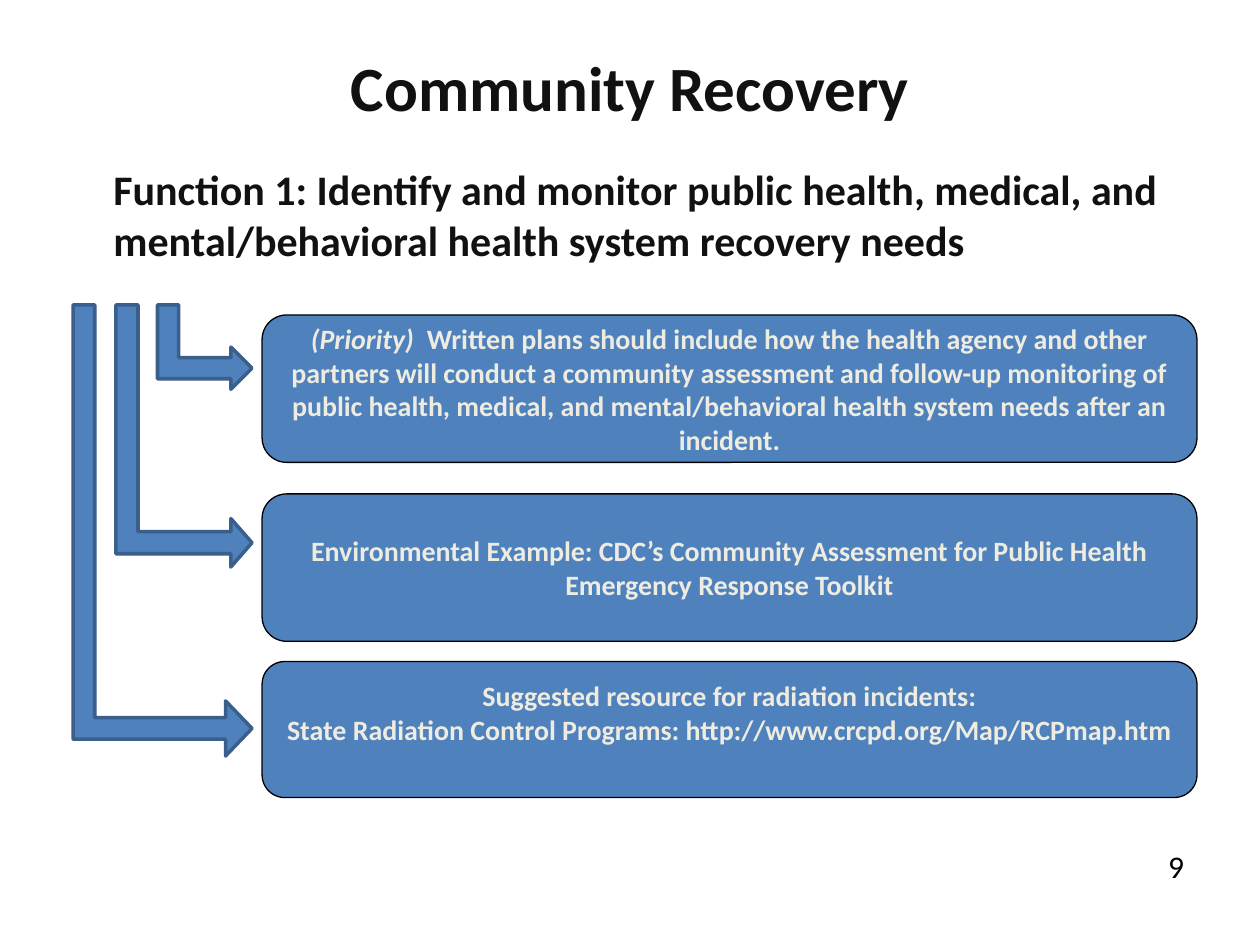
from lxml import etree
from pptx import Presentation
from pptx.dml.color import RGBColor
from pptx.enum import shapes, text
from pptx.oxml.ns import qn
from pptx.util import Inches, Pt

COLORS = {"ink": "111111", "black": "000000", "cream": "EEECE1",
          "blue": "4F81BD", "navy": "3A5F8C"}
TITLE = "Community Recovery"
FUNCTION = ("Function 1: Identify and monitor public health, medical, and "
            "mental/behavioral health system recovery needs")
PAGE_NUMBER = "9"
CARD_LEFT, CARD_WIDTH = 2.08, 7.42
CARDS = [
    {"top": 2.5, "height": 1.17, "bottom_inset": 0.05, "paragraphs": [[
        ("(Priority) ", True),
        (" Written plans should include how the health agency and other "
         "partners will conduct a community assessment and follow-up "
         "monitoring of public health, medical, and mental/behavioral "
         "health system needs after an incident.", False)]]},
    {"top": 3.92, "height": 1.17, "bottom_inset": 0.05, "paragraphs": [[
        ("Environmental Example: CDC’s Community Assessment for Public "
         "Health Emergency Response Toolkit", False)]]},
    {"top": 5.25, "height": 1.08, "bottom_inset": 0.32, "paragraphs": [
        [("Suggested resource for radiation incidents:", False)],
        [("State Radiation Control Programs: "
          "http://www.crcpd.org/Map/RCPmap.htm", False)]]},
]
ARROWS = [
    ((0.42, 2.92, 2.08, 1.08), (0.162, 0.178, 0.156)),
    ((1.29, 2.38, 0.67, 0.75), (0.25, 0.25, 0.25)),
    ((-0.5, 3.5, 3.58, 1.42), (0.121, 0.154, 0.148)),
]


def color(name):
    return RGBColor.from_string(COLORS[name])


def write(box, paragraphs, size, ink, bold=True, align=text.PP_ALIGN.CENTER,
          anchor=text.MSO_ANCHOR.MIDDLE, bottom_inset=0.05):
    frame = box.text_frame
    frame.word_wrap = True
    frame.auto_size = text.MSO_AUTO_SIZE.NONE
    frame.vertical_anchor = anchor
    frame.margin_bottom = Inches(bottom_inset)
    for index, spans in enumerate(paragraphs):
        para = frame.add_paragraph() if index else frame.paragraphs[0]
        para.alignment = align
        for words, italic in spans:
            span = para.add_run()
            span.text = words
            span.font.name = "Calibri"
            span.font.size = Pt(size)
            span.font.bold = bold
            span.font.italic = italic
            span.font.color.rgb = color(ink)
    return frame.paragraphs[0]


def place(box, *bounds):
    box.left, box.top, box.width, box.height = map(Inches, bounds)


def add_block(group, kind, bounds, adjustments, line, width):
    block = group.shapes.add_shape(kind, *map(Inches, bounds))
    block.shadow.inherit = False
    block.fill.solid()
    block.fill.fore_color.rgb = color("blue")
    block.line.color.rgb = color(line)
    block.line.width = Pt(width)
    for index, value in enumerate(adjustments):
        block.adjustments[index] = value
    return block


deck = Presentation()
deck.slide_width, deck.slide_height = Inches(10), Inches(7.5)
page = deck.slides.add_slide(deck.slide_layouts[1])

title, body = page.shapes.title, page.placeholders[1]
place(title, 0.5, 0.3, 9, 0.95)
write(title, [[(TITLE, False)]], 36, "ink").line_spacing = Pt(30)

place(body, 0.42, 1.25, 9, 1.08)
para = write(body, [[(FUNCTION, False)]], 24, "ink",
             align=text.PP_ALIGN.LEFT, anchor=text.MSO_ANCHOR.TOP)
properties = para._p.get_or_add_pPr()
properties.set("marL", str(Inches(0.38)))
properties.set("indent", "0")
etree.SubElement(properties, qn("a:buNone"))

diagram = page.shapes.add_group_shape()
for card in CARDS:
    bounds = (CARD_LEFT, card["top"], CARD_WIDTH, card["height"])
    box = add_block(diagram, shapes.MSO_SHAPE.ROUNDED_RECTANGLE, bounds,
                    [0.167], "black", 0.75)
    write(box, card["paragraphs"], 16, "cream",
          bottom_inset=card["bottom_inset"])
for bounds, adjustments in ARROWS:
    arrow = add_block(diagram, shapes.MSO_SHAPE.BENT_UP_ARROW, bounds,
                      adjustments, "navy", 2)
    arrow.rotation = 90

number = page.shapes.add_textbox(*map(Inches, (9, 6.67, 0.67, 0.4)))
write(number, [[(PAGE_NUMBER, False)]], 18, "black", bold=False,
      anchor=text.MSO_ANCHOR.TOP)

deck.save("out.pptx")
